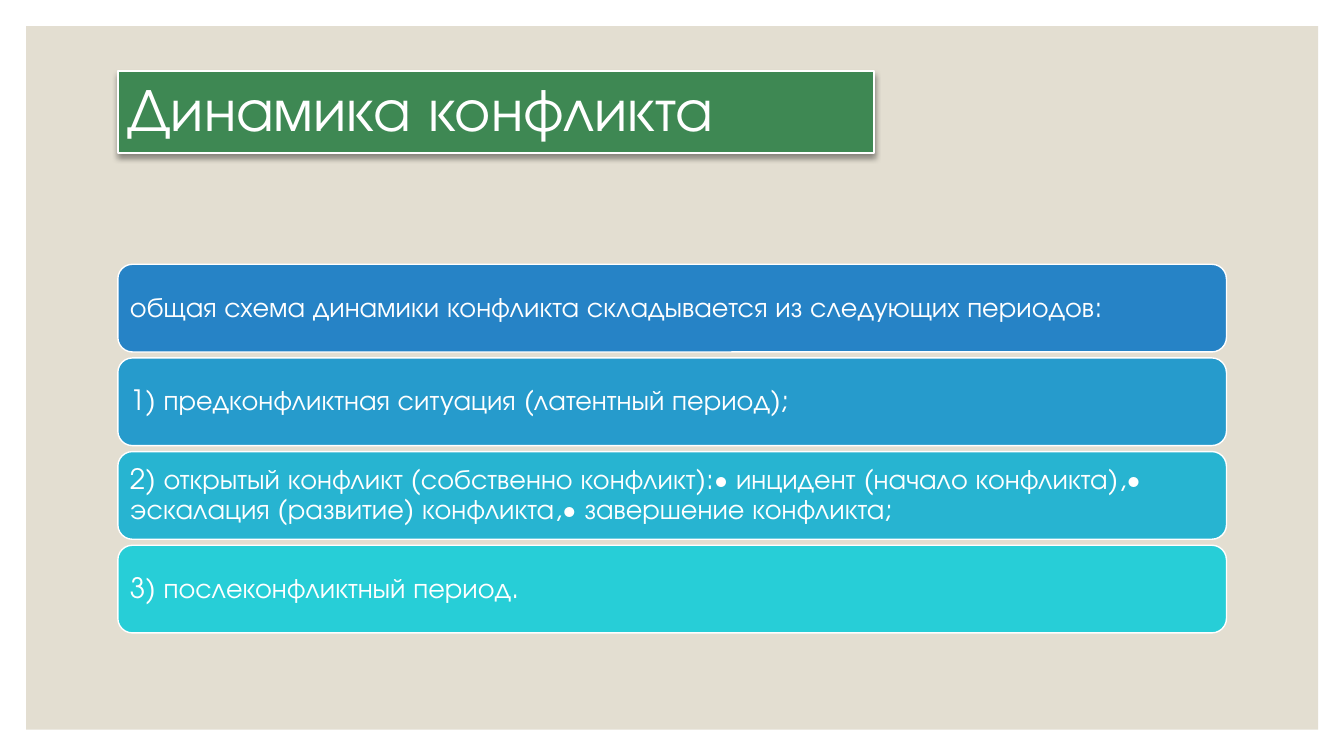
from lxml.etree import SubElement
from pptx import Presentation
from pptx.dml.color import RGBColor
from pptx.enum.shapes import MSO_SHAPE as SHAPE
from pptx.enum.text import MSO_ANCHOR as ANCHOR, PP_ALIGN as ALIGN
from pptx.oxml.ns import qn
from pptx.util import Cm, Pt


def rgb(value):
    return RGBColor.from_string(value)


class Deck:
    """Holds the text style and the current slide, and draws its elements."""

    font = {"name": "TeX Gyre Adventor"}
    color = "FFFFFF"

    def __init__(self, width, height):
        self.prs = Presentation()
        self.prs.slide_width, self.prs.slide_height = Cm(width), Cm(height)
        self.s = self.prs.slides.add_slide(self.prs.slide_layouts[6])

    def box(self, kind, place, fill, line=None):
        sp = self.s.shapes.add_shape(kind, *map(Cm, place))
        sp.shadow.inherit = False
        sp.fill.solid()
        sp.fill.fore_color.rgb = rgb(fill)
        if line:
            sp.line.color.rgb = rgb(self.color)
            sp.line.width = Pt(line)
        else:
            sp.line.fill.background()
        return sp

    def text(self, sp, text, size, inset_x, inset_y):
        tf = sp.text_frame
        frame = {
            "word_wrap": True,
            "vertical_anchor": ANCHOR.MIDDLE,
            "margin_left": Cm(inset_x),
            "margin_right": Cm(inset_x),
            "margin_top": Cm(inset_y),
            "margin_bottom": Cm(inset_y),
        }
        p = tf.paragraphs[0]
        r = p.add_run()
        r.text = text
        r.font.color.rgb = rgb(self.color)
        formats = (
            (tf, frame),
            (p, {"alignment": ALIGN.LEFT, "line_spacing": 0.9}),
            (r.font, {**self.font, "size": Pt(size)}),
        )
        for target, values in formats:
            for name, value in values.items():
                setattr(target, name, value)

    def shadow(self, sp, blur, distance, angle, opacity):
        effects = sp._element.spPr.find(qn("a:effectLst"))
        outer = SubElement(effects, qn("a:outerShdw"), {
            "blurRad": str(Pt(blur)),
            "dist": str(Pt(distance)),
            "dir": str(angle * 60000),
            "algn": "ctr",
            "rotWithShape": "0",
        })
        clr = SubElement(outer, qn("a:srgbClr"), val="000000")
        SubElement(clr, qn("a:alpha"), val=str(opacity * 1000))

    def title(self, text, place, fill):
        sp = self.box(SHAPE.RECTANGLE, place, fill, 1.5)
        self.shadow(sp, 4, 3, 90, 40)
        self.text(sp, text, 43.2, 0.25, 0.13)

    def bar(self, text, place, fill):
        sp = self.box(SHAPE.ROUNDED_RECTANGLE, place, fill, 1)
        self.text(sp, text, 20, 0.2, 0.2)


PERIODS = (
    ("общая схема динамики конфликта складывается из следующих периодов:", "2683C6"),
    ("1) предконфликтная ситуация (латентный период);", "269BCC"),
    ("2) открытый конфликт (собственно конфликт):• инцидент (начало конфликта),"
     "• эскалация (развитие) конфликта,• завершение конфликта;", "27B4D1"),
    ("3) послеконфликтный период.", "27CED7"),
)
LEFT, TOP, WIDTH, HEIGHT, PITCH = 2.97, 6.66, 27.94, 2.21, 2.36


def main():
    deck = Deck(33.87, 19.05)
    deck.box(SHAPE.RECTANGLE, (0.66, 0.66, 32.56, 17.73), "E3DED1")
    deck.title("Динамика конфликта", (LEFT, 1.78, 19.05, 2.08), "3E8853")
    for i, (text, fill) in enumerate(PERIODS):
        deck.bar(text, (LEFT, TOP + i * PITCH, WIDTH, HEIGHT), fill)
    deck.prs.save("out.pptx")


if __name__ == "__main__":
    main()
